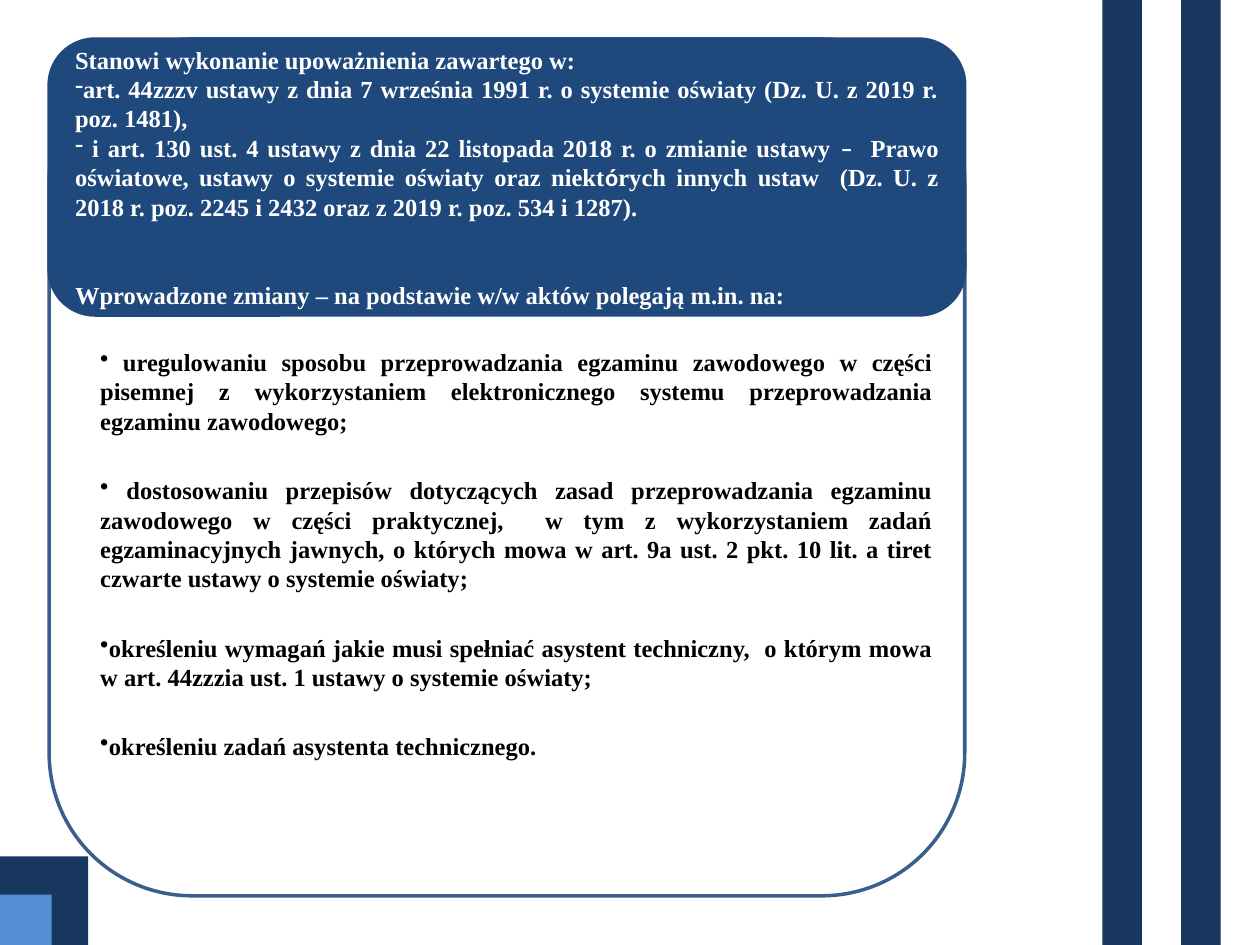
from pptx import Presentation
from pptx.dml.color import RGBColor
from pptx.enum.shapes import MSO_SHAPE as Shape
from pptx.enum.text import MSO_ANCHOR as Anchor, PP_ALIGN as Align
from pptx.oxml.ns import qn
from pptx.util import Pt
from lxml.etree import SubElement

NAVY = RGBColor(0x17, 0x37, 0x5E)
SKY = RGBColor(0x55, 0x8E, 0xD5)
BLUE = RGBColor(0x1F, 0x49, 0x7D)
EDGE = RGBColor(0x3A, 0x5F, 0x8C)
WHITE = RGBColor(0xFF, 0xFF, 0xFF)
BLACK = RGBColor(0, 0, 0)
SERIF, SANS = "Times New Roman", "Calibri"

# Content: header paragraphs as (bullet, space before, runs)
LINE = 16.8
HEAD = [
    (None, 0, [("Stanowi wykonanie upoważnienia zawartego w:", SERIF)]),
    ("-", 0, [("art. 44zzzv ustawy z dnia 7 września 1991 r. o systemie oświaty "
               "(Dz. U. z 2019 r. poz. 1481),", SERIF)]),
    ("-", 0, [
        (" i art. 130 ust. 4 ustawy z dnia 22 listopada 2018 r. o zmianie ustawy ", SERIF),
        ("–", SANS),
        ("  Prawo oświatowe, ustawy o systemie oświaty oraz niekt", SERIF),
        ("ó", SANS),
        ("rych innych ustaw  (Dz. U. z 2018 r. poz. 2245 i 2432 oraz z 2019 r. "
         "poz. 534 i 1287).", SERIF)]),
    (None, 2 * LINE, [("Wprowadzone zmiany – na podstawie w/w aktów polegają m.in. na:",
                       SERIF)]),
]

# Content: changes as (lines, box width, runs)
ITEMS = [
    (3, 490, [(" ", SANS),
              ("uregulowaniu sposobu przeprowadzania egzaminu zawodowego w części "
               "pisemnej z wykorzystaniem elektronicznego systemu przeprowadzania "
               "egzaminu zawodowego;", SERIF)]),
    (4, 490, [(" dostosowaniu przepisów dotyczących zasad przeprowadzania egzaminu "
               "zawodowego w części praktycznej,  w tym z wykorzystaniem zadań "
               "egzaminacyjnych jawnych, o których mowa w art. 9a ust. 2 pkt. 10 lit. a "
               "tiret czwarte ustawy o systemie oświaty;", SERIF)]),
    (2, 490, [("określeniu wymagań jakie musi spełniać asystent techniczny,  o którym "
               "mowa w art. 44zzzia ust. 1 ustawy o systemie oświaty;", SERIF)]),
    (1, 329, [("określeniu zadań asystenta technicznego.", SERIF)]),
]

# Places: left, top, width, height; the decoration bleeds over the edges
WIDE, HIGH = 720, 540
DECOR = [
    ((-236.2, 489.4, 286.6, 174.2), NAVY),
    ((-78.5, 511.2, 108, 90.7), SKY),
    ((652.5, 0, 22.5, HIGH), WHITE),
    ((675, -55.4, 22.5, 652.3), NAVY),
    ((630, -43.2, 22.5, 652.3), NAVY),
]
PANEL = (28.1, 22.3, 523.2, 489.6)
BANNER = PANEL[:3] + (157.7,)
LEFT, TOP, GAP, PAD = 50.2, 194.8, 15.6, 3.6


def add_box(kind, place, fill=None, edge=None):
    box = slide.shapes.add_shape(kind, *map(Pt, place))
    box.shadow.inherit = False
    if fill is None:
        box.fill.background()
    else:
        box.fill.solid()
        box.fill.fore_color.rgb = fill
    if edge is None:
        box.line.fill.background()
    else:
        box.line.color.rgb = edge
        box.line.width = Pt(2)
    return box


def write(para, runs, color, mark=None, before=0):
    form = {"alignment": Align.JUSTIFY, "line_spacing": Pt(LINE),
            "space_before": Pt(before)}
    for key, val in form.items():
        setattr(para, key, val)
    if mark:
        props = para._p.get_or_add_pPr()
        props.set("marL", "0")
        props.set("indent", "0")
        SubElement(props, qn("a:buChar")).set("char", mark)
    for text, face in runs:
        run = para.add_run()
        run.text = text
        for key, val in {"name": face, "size": Pt(14), "bold": True}.items():
            setattr(run.font, key, val)
        run.font.color.rgb = color


deck = Presentation()
deck.slide_width, deck.slide_height = Pt(WIDE), Pt(HIGH)
slide = deck.slides.add_slide(deck.slide_layouts[6])

# Side bars and corner
for place, fill in DECOR:
    add_box(Shape.RECTANGLE, place, fill)

# Panel and its banner
add_box(Shape.ROUNDED_RECTANGLE, PANEL, edge=EDGE)
banner = add_box(Shape.ROUNDED_RECTANGLE, BANNER, BLUE, BLUE)
frame = banner.text_frame
frame.word_wrap = True
frame.vertical_anchor = Anchor.MIDDLE
for num, (mark, before, runs) in enumerate(HEAD):
    para = frame.add_paragraph() if num else frame.paragraphs[0]
    write(para, runs, WHITE, mark, before)

# Changes, stacked with equal gaps
top = TOP
for lines, width, runs in ITEMS:
    tall = lines * LINE + 2 * PAD
    note = slide.shapes.add_textbox(Pt(LEFT), Pt(top), Pt(width), Pt(tall))
    note.text_frame.word_wrap = True
    write(note.text_frame.paragraphs[0], runs, BLACK, "•")
    top += tall + GAP

deck.save("out.pptx")
